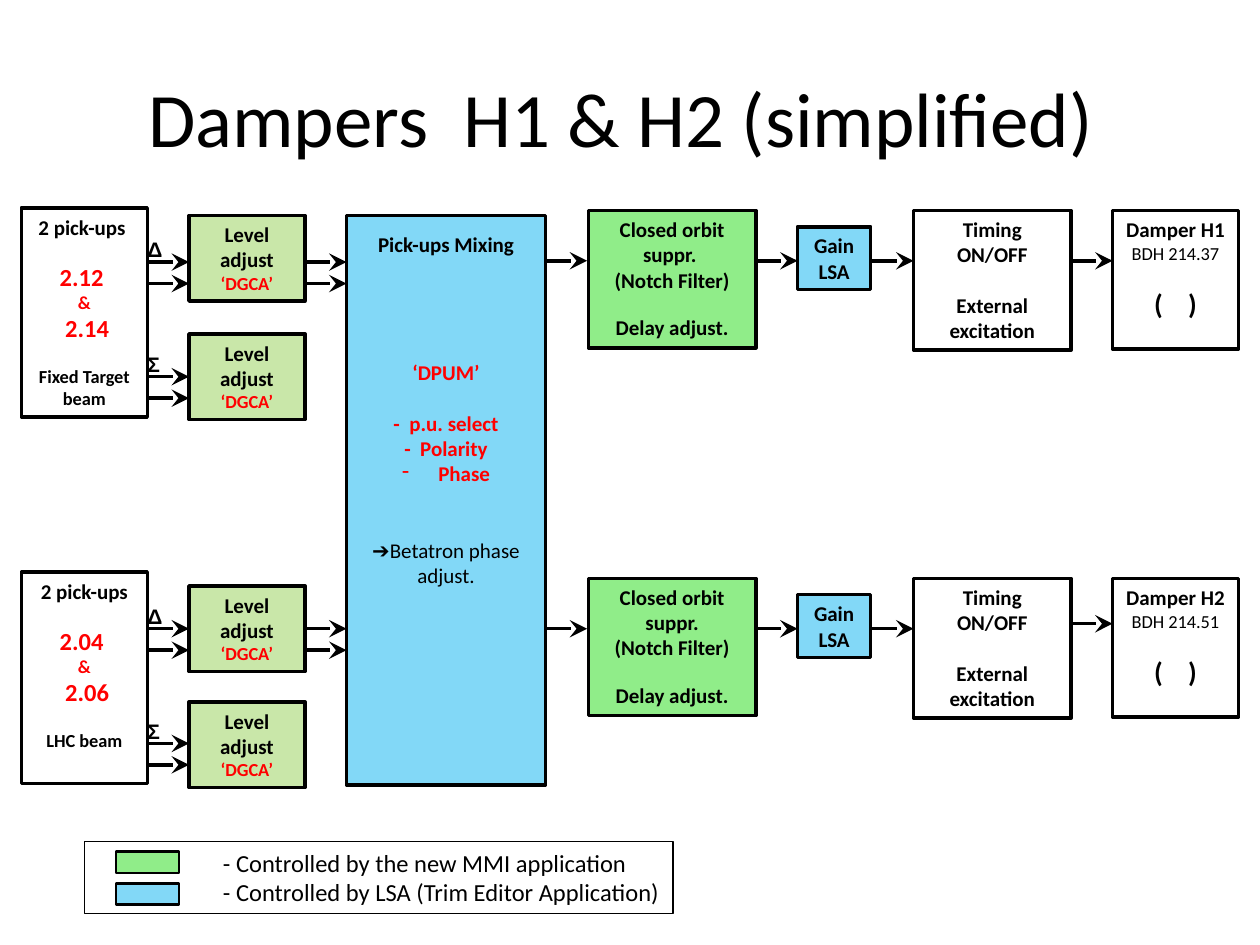
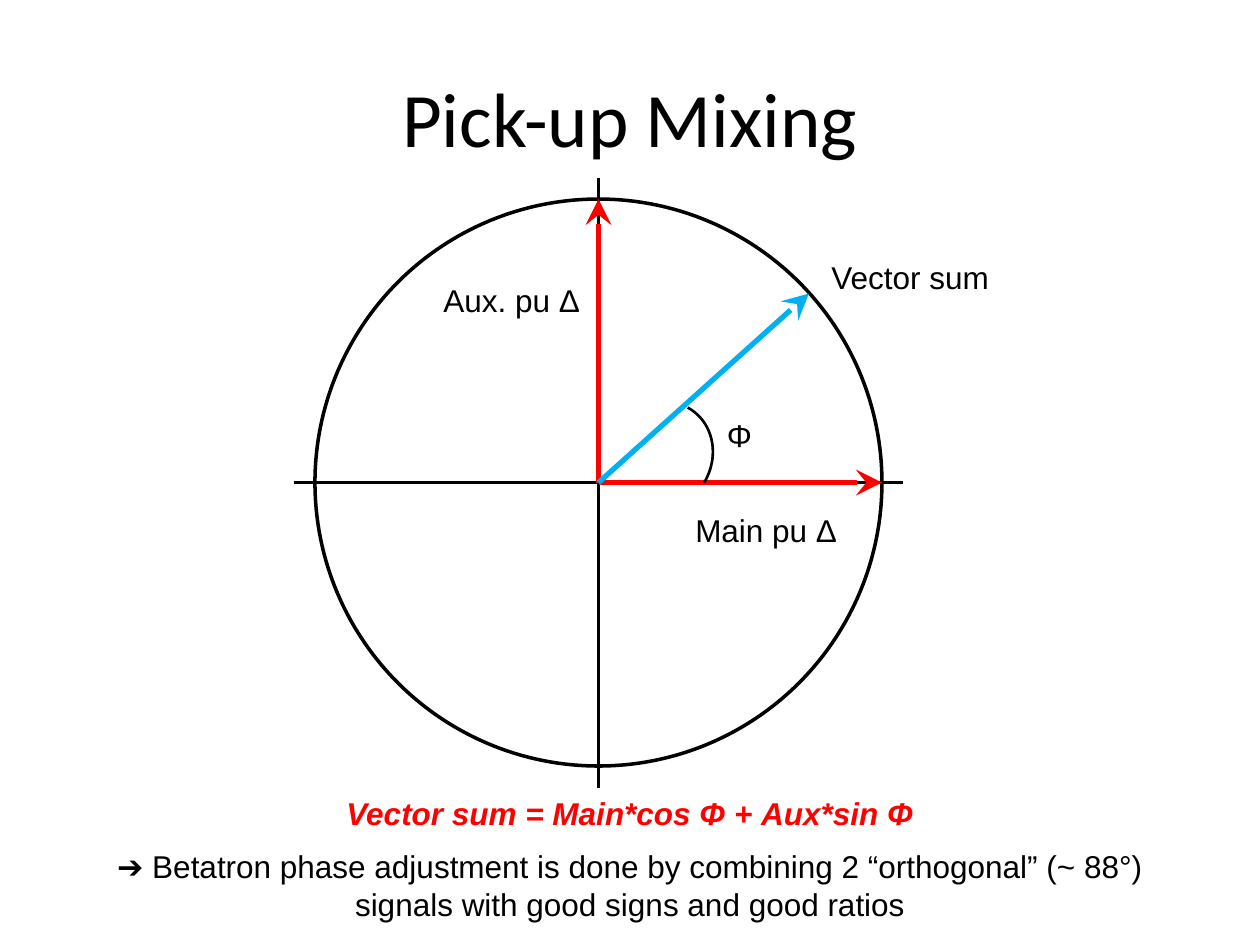
from dataclasses import dataclass

from lxml import etree
from pptx import Presentation
from pptx.dml.color import RGBColor
from pptx.enum.shapes import MSO_CONNECTOR, MSO_SHAPE
from pptx.enum.text import MSO_ANCHOR, PP_ALIGN
from pptx.oxml.ns import qn
from pptx.util import Inches, Pt

RECT = MSO_SHAPE.RECTANGLE
OVAL = MSO_SHAPE.OVAL
ARC = MSO_SHAPE.ARC
STRAIGHT = MSO_CONNECTOR.STRAIGHT
LEFT, CENTER = PP_ALIGN.LEFT, PP_ALIGN.CENTER
TOP, MIDDLE = MSO_ANCHOR.TOP, MSO_ANCHOR.MIDDLE


@dataclass(frozen=True)
class Theme:
    ink: RGBColor = RGBColor(0x00, 0x00, 0x00)
    red: RGBColor = RGBColor(0xFF, 0x00, 0x00)
    blue: RGBColor = RGBColor(0x00, 0xB0, 0xF0)
    green: RGBColor = RGBColor(0x1E, 0xDB, 0x0F)
    lime: RGBColor = RGBColor(0x92, 0xD0, 0x50)
    main: str = "Calibri"
    plain: str = "Arial"
    title: float = 44
    large: float = 18
    sign: float = 16
    mid: float = 14
    body: float = 12
    small: float = 10.5
    alpha: int = 49000
    thin: float = 1
    fine: float = 1.5
    line: float = 2
    bold: float = 3


THEME = Theme()
GAP = 12.8
ROW = 14.65


def put(frame, text, size=THEME.body, font=THEME.main, color=THEME.ink,
        bold=False, italic=False, align=CENTER, before=0, bullet=None):
    para = frame.paragraphs[0]
    if para.runs:
        para = frame.add_paragraph()
    para.alignment = align
    para.space_before = Pt(before)
    run = para.add_run()
    run.text = text
    run.font.size = Pt(size)
    run.font.name = font
    run.font.color.rgb = color
    run.font.bold = bold
    run.font.italic = italic
    if bullet:
        props = para._p.get_or_add_pPr()
        props.set("marL", str(Inches(0.25)))
        props.set("indent", str(-Inches(0.25)))
        etree.SubElement(props, qn("a:buFontTx"))
        etree.SubElement(props, qn("a:buChar"), char=bullet)


class Deck:
    def __init__(self, theme):
        self.theme = theme
        self.show = Presentation()
        self.show.slide_width = Inches(10)
        self.show.slide_height = Inches(7.5)
        self.slide = None

    def page(self, title):
        self.slide = self.show.slides.add_slide(self.show.slide_layouts[5])
        head = self.slide.shapes.title
        head.left, head.top = Inches(0.5), Inches(0.3)
        head.width, head.height = Inches(9), Inches(1.25)
        head.text_frame.vertical_anchor = MIDDLE
        put(head.text_frame, title, size=self.theme.title)

    def shape(self, x, y, w, h, kind=RECT, fill=None, width=THEME.line):
        item = self.slide.shapes.add_shape(
            kind, Inches(x), Inches(y), Inches(w), Inches(h))
        item.shadow.inherit = False
        item.line.color.rgb = self.theme.ink
        item.line.width = Pt(width)
        if fill is None:
            item.fill.background()
        else:
            item.fill.solid()
            item.fill.fore_color.rgb = fill
            tint = item.element.spPr.find(qn("a:solidFill"))[0]
            etree.SubElement(tint, qn("a:alpha"), val=str(self.theme.alpha))
        return item

    def box(self, x, y, w, h, paras, fill=None, **style):
        item = self.shape(x, y, w, h, fill=fill, **style)
        frame = item.text_frame
        frame.word_wrap = True
        frame.vertical_anchor = TOP
        for text, form in paras:
            put(frame, text, **{"bold": True, **form})
        return frame

    def label(self, x, y, w, h, text, wrap=True, **form):
        item = self.slide.shapes.add_textbox(
            Inches(x), Inches(y), Inches(w), Inches(h))
        frame = item.text_frame
        frame.word_wrap = wrap
        if not wrap:
            frame.margin_left = frame.margin_right = 0
        put(frame, text, **{"font": self.theme.plain, "align": LEFT, **form})
        return frame

    def line(self, x1, y1, x2, y2, color=THEME.ink, width=THEME.line,
             arrow=False):
        item = self.slide.shapes.add_connector(
            STRAIGHT, Inches(x1), Inches(y1), Inches(x2), Inches(y2))
        item.line.color.rgb = color
        item.line.width = Pt(width)
        props = item.element.spPr
        if arrow:
            etree.SubElement(props.find(qn("a:ln")), qn("a:tailEnd"),
                             type="stealth", w="lg", len="lg")
        etree.SubElement(props, qn("a:effectLst"))

    def wire(self, x, y):
        self.line(x, y, x + 0.33, y, arrow=True)


def source(deck, top, high, name, first, second, beam):
    t = deck.theme
    deck.box(0.17, top, 1, high, [
        (name, {}),
        (first, dict(size=t.mid, color=t.red, before=GAP)),
        ("&", dict(size=t.small, color=t.red)),
        (second, dict(size=t.mid, color=t.red)),
        (beam, dict(size=t.small, before=GAP)),
    ])


def level(deck, mark, top, y):
    t = deck.theme
    deck.label(1.17, y - 0.25, 0.08, 0.3, mark, wrap=False, bold=True)
    deck.box(1.5, top, 0.92, 0.68, [
        ("Level adjust", {}),
        ("‘DGCA’", dict(size=t.small, color=t.red)),
    ], fill=t.lime)
    for step in (0, 0.17):
        deck.wire(1.17, y + step)
        if mark == "Δ":
            deck.wire(2.42, y + step)


def chain(deck, top, orbit, name, code, last):
    t = deck.theme
    deck.box(4.67, top, 1.33, 1.09, [
        (orbit, {}),
        ("(Notch Filter)", {}),
        ("Delay adjust.", dict(before=GAP)),
    ], fill=t.green)
    deck.box(6.33, top + 0.13, 0.58, 0.5, [("Gain LSA", {})], fill=t.blue)
    deck.box(7.25, top, 1.25, 1.11, [
        ("Timing ON/OFF", {}),
        ("External excitation", dict(before=ROW)),
    ])
    deck.box(8.83, top, 1, 1.1, [
        (name, {}),
        (code, dict(size=t.small, bold=False)),
        ("(    )", dict(size=t.sign, before=GAP)),
    ])
    for x in (4.33, 6, 6.92):
        deck.wire(x, top + 0.4)
    deck.wire(8.5, last)


def mixer(deck):
    t = deck.theme
    red = dict(color=t.red)
    frame = deck.box(2.75, 1.71, 1.58, 4.52, [
        ("Pick-ups Mixing", {}),
        ("‘DPUM’", dict(red, before=4 * ROW)),
        ("-  p.u. select", dict(red, before=ROW)),
        ("-  Polarity", red),
        (" Phase", dict(red, bullet="-")),
        ("➔Betatron phase adjust.", dict(bold=False, before=2 * ROW)),
    ], fill=t.blue)
    frame.margin_top = Inches(0.13)


def legend(deck):
    t = deck.theme
    form = dict(size=t.mid, bold=False, align=LEFT)
    frame = deck.box(0.67, 6.68, 4.67, 0.57, [
        ("- Controlled by the new MMI application", form),
        ("- Controlled by LSA (Trim Editor Application)", form),
    ], width=t.thin)
    frame.margin_left = Inches(1.1)
    frame.margin_right = 0
    for row, fill in enumerate((t.green, t.blue)):
        deck.shape(0.92, 6.76 + 0.25 * row, 0.5, 0.17, fill=fill, width=t.fine)


def dampers(deck):
    deck.page("Dampers  H1 & H2 (simplified) ")
    source(deck, 1.65, 1.66, "2 pick-ups ", "2.12 ", " 2.14",
           "Fixed Target beam")
    source(deck, 4.54, 1.68, "2 pick-ups", "2.04 ", " 2.06", "LHC beam")
    mixer(deck)
    for mark, top, y in (("Δ", 1.71, 2.08), ("Σ", 2.65, 2.99),
                         ("Δ", 4.65, 4.99), ("Σ", 5.57, 5.9)):
        level(deck, mark, top, y)
    chain(deck, 1.67, "Closed orbit suppr. ", "Damper H1", "BDH 214.37", 2.07)
    chain(deck, 4.59, "Closed orbit suppr.", "Damper H2", "BDH 214.51", 4.95)
    legend(deck)


def mixing(deck):
    t = deck.theme
    x, y, r = 4.75, 3.83, 2.25
    deck.page("Pick-up Mixing")
    deck.shape(x - r, y - r, 2 * r, 2 * r, kind=OVAL)
    deck.line(x - 2.42, y, x + 2.42, y)
    deck.line(x, y - 2.42, x, y + 2.42)
    for dx, dy, color in ((r, 0, t.red), (0, -r, t.red), (1.67, -1.5, t.blue)):
        deck.line(x, y, x + dx, y + dy, color, t.bold, arrow=True)
    for left, top, wide, text in ((5.42, 4.01, 1.33, "Main pu Δ"),
                                  (3.42, 2.18, 1.33, "Aux. pu Δ"),
                                  (6.5, 2, 1.67, "Vector sum"),
                                  (5.67, 3.25, 0.58, "Φ")):
        deck.label(left, top, wide, 0.4, text, size=t.large)
    arc = deck.shape(4.81, 3.17, 0.83, 0.92, kind=ARC, width=t.fine)
    arc.rotation = 38.5
    for spot, angle in enumerate((262, 350.3)):
        arc.adjustments[spot] = angle * 0.6
    frame = deck.label(0.75, 6.25, 8.5, 1.15,
                       "Vector sum = Main*cos Φ + Aux*sin Φ", size=t.large,
                       color=t.red, bold=True, italic=True, align=CENTER)
    put(frame, "➔ Betatron phase adjustment is done by combining 2 "
        "“orthogonal” (~ 88°) signals with good signs and good ratios",
        size=t.large, font=t.plain, before=9)


def main():
    deck = Deck(THEME)
    dampers(deck)
    mixing(deck)
    deck.show.save("out.pptx")


if __name__ == "__main__":
    main()
